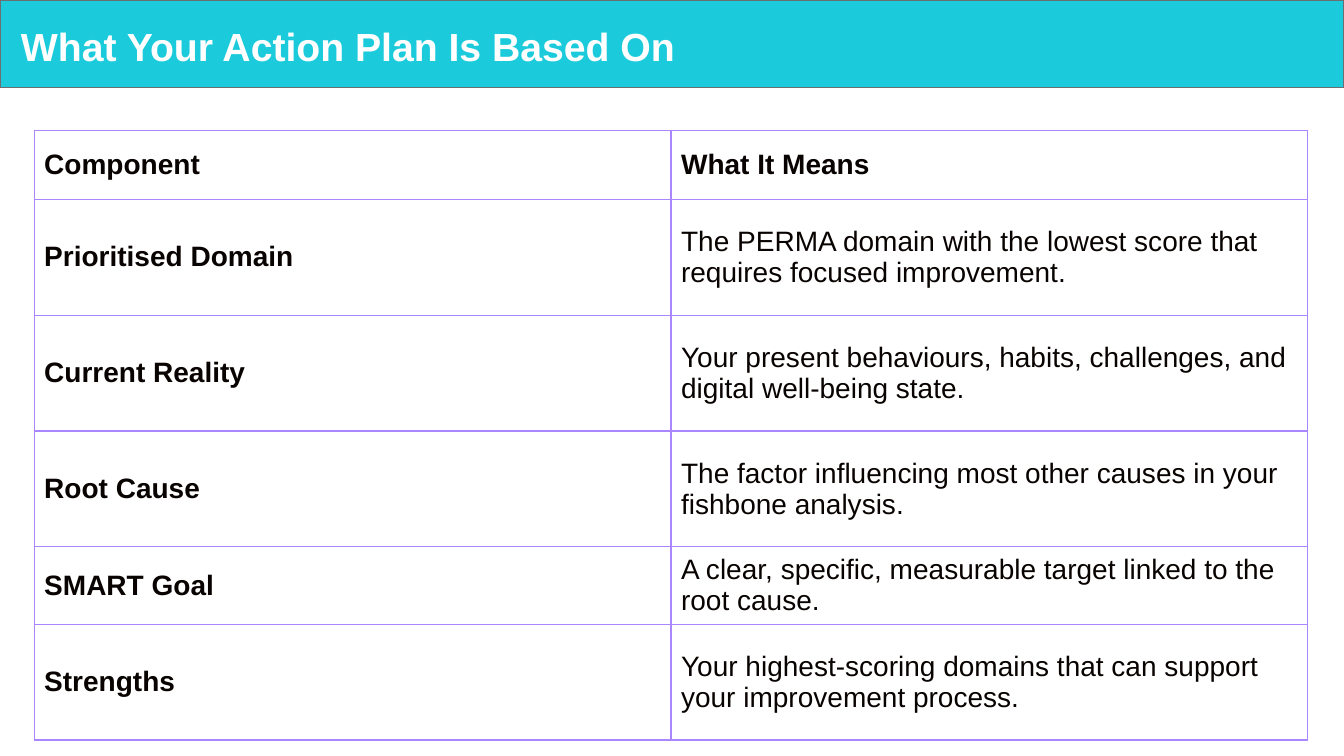
import pptx
import pptx.dml.color
import pptx.enum.shapes
import pptx.enum.text
import pptx.oxml
import pptx.oxml.ns
import pptx.util
from pptx.util import Cm

COLORS = {
    "banner": "1BCBDC",
    "banner_line": "6C6E70",
    "title": "FFFFFF",
    "text": "080301",
    "border": "AA87FF",
}

ROWS = [
    ("Component", "What It Means"),
    ("Prioritised Domain", "The PERMA domain with the lowest score that requires focused improvement."),
    ("Current Reality", "Your present behaviours, habits, challenges, and digital well-being state."),
    ("Root Cause", "The factor influencing most other causes in your fishbone analysis."),
    ("SMART Goal", "A clear, specific, measurable target linked to the root cause."),
    ("Strengths", "Your highest-scoring domains that can support your improvement process."),
]
SHORT_ROW, TALL_ROW = 1.73, 2.92
ROW_HEIGHTS = [SHORT_ROW, TALL_ROW, TALL_ROW, TALL_ROW, SHORT_ROW, TALL_ROW]
COLUMN_WIDTH = 16.05


def rgb(name):
    return pptx.dml.color.RGBColor.from_string(COLORS[name])


def write_text(text_frame, text, size=20, color="text", bold=False, line_spacing=None):
    paragraph = text_frame.paragraphs[0]
    paragraph.line_spacing = line_spacing
    run = paragraph.add_run()
    run.text = text
    run.font.name = "Arial"
    run.font.size = pptx.util.Pt(size)
    run.font.bold = bold
    run.font.color.rgb = rgb(color)


presentation = pptx.Presentation()
presentation.slide_width = Cm(33.87)
presentation.slide_height = Cm(19.05)
slide = presentation.slides.add_slide(presentation.slide_layouts[6])

# Banner
banner = slide.shapes.add_shape(
    pptx.enum.shapes.MSO_SHAPE.RECTANGLE, 0, 0, presentation.slide_width, Cm(2.21))
banner.shadow.inherit = False
banner.fill.solid()
banner.fill.fore_color.rgb = rgb("banner")
banner.line.color.rgb = rgb("banner_line")
banner.line.width = pptx.util.Pt(1)

# Title
title = slide.shapes.add_textbox(Cm(0.28), Cm(0.23), Cm(33.17), Cm(1.98))
title_frame = title.text_frame
title_frame.word_wrap = True
title_frame.vertical_anchor = pptx.enum.text.MSO_ANCHOR.MIDDLE
title_frame.margin_left = Cm(0.25)
title_frame.margin_right = title_frame.margin_top = title_frame.margin_bottom = Cm(0.15)
write_text(title_frame, "What Your Action Plan Is Based On",
           size=28, color="title", bold=True, line_spacing=0.9)

# Table of components
table = slide.shapes.add_table(
    len(ROWS), 2, Cm(0.86), Cm(3.29), Cm(2 * COLUMN_WIDTH), Cm(sum(ROW_HEIGHTS))).table
table.first_row = False
table.horz_banding = False
for column in table.columns:
    column.width = Cm(COLUMN_WIDTH)

for row_index, (texts, height) in enumerate(zip(ROWS, ROW_HEIGHTS)):
    table.rows[row_index].height = Cm(height)
    for column_index, text in enumerate(texts):
        cell = table.cell(row_index, column_index)
        cell.vertical_anchor = pptx.enum.text.MSO_ANCHOR.MIDDLE
        cell.fill.background()
        write_text(cell.text_frame, text, bold=row_index == 0 or column_index == 0)

        # Cell borders come before the fill in the cell properties
        properties = cell._tc.get_or_add_tcPr()
        for position, side in enumerate(("lnL", "lnR", "lnT", "lnB")):
            border = pptx.oxml.parse_xml(
                f'<a:{side} {pptx.oxml.ns.nsdecls("a")} w="12700"><a:solidFill>'
                f'<a:srgbClr val="{COLORS["border"]}"/></a:solidFill></a:{side}>')
            properties.insert(position, border)

presentation.save("out.pptx")
